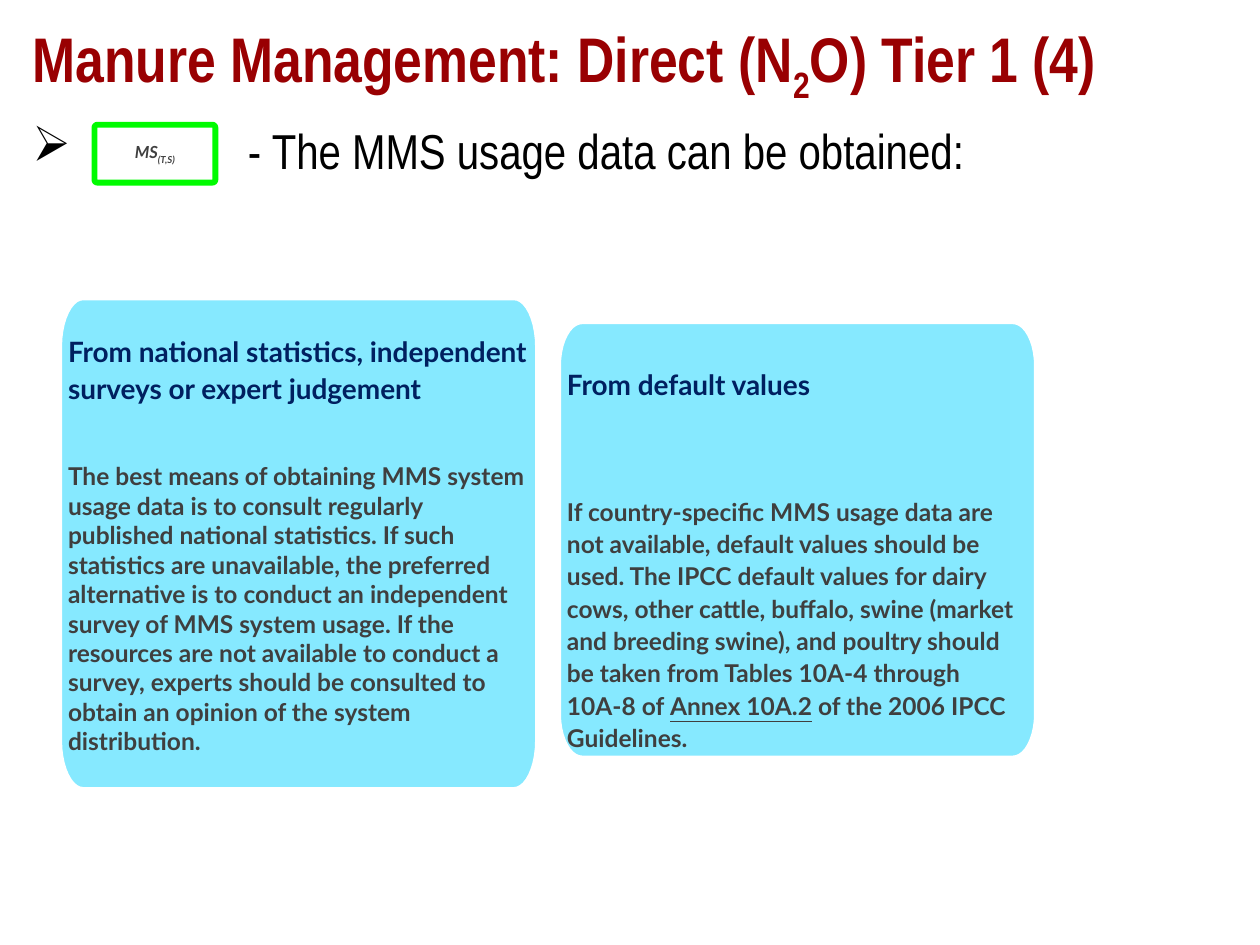
from math import cos, pi, sin

from pptx import Presentation
from pptx.dml.color import RGBColor
from pptx.enum.shapes import MSO_SHAPE
from pptx.enum.text import MSO_ANCHOR, PP_ALIGN
from pptx.oxml.ns import qn
from pptx.util import Inches, Pt

ROUNDED = MSO_SHAPE.ROUNDED_RECTANGLE
TOP, MIDDLE = MSO_ANCHOR.TOP, MSO_ANCHOR.MIDDLE
LEFT, CENTER = PP_ALIGN.LEFT, PP_ALIGN.CENTER

RED = RGBColor(0x99, 0x00, 0x02)
BLACK = RGBColor(0x00, 0x00, 0x00)
WHITE = RGBColor(0xFF, 0xFF, 0xFF)
GREEN = RGBColor(0x00, 0xFB, 0x00)
CYAN = RGBColor(0x86, 0xE9, 0xFF)
NAVY = RGBColor(0x00, 0x20, 0x60)
GREY = RGBColor(0x3F, 0x3F, 0x3F)

NARROW, LATO = "Arial Narrow", "Lato"
LINE_WIDTH = Pt(3.35)
CARD_WIDTH = 3.8
CORNER_WIDTH = 0.19
CORNER_STEPS = 10


class SlideBuilder:
    def __init__(self, page):
        self.page = page

    def frame(self, shape, anchor, insets):
        frame = shape.text_frame
        frame.word_wrap = True
        frame.vertical_anchor = anchor
        (frame.margin_left, frame.margin_top,
         frame.margin_right, frame.margin_bottom) = map(Inches, insets)
        return frame

    def fill_para(self, para, spans, size, font, color, bold=False, italic=False, align=LEFT):
        """Fill a paragraph; each span is (text, style), style "", "sub" or "underline"."""
        para.alignment = align
        for text, style in spans:
            span = para.add_run()
            span.text = text
            if style == "sub":
                span.font._element.set("baseline", "-25000")
            elif style == "underline":
                span.font.underline = True
        para.font.size, para.font.name = Pt(size), font
        para.font.bold, para.font.italic = bold, italic
        para.font.color.rgb = color

    def paint(self, shape, fill, line):
        shape.shadow.inherit = False
        shape.fill.solid()
        shape.fill.fore_color.rgb = fill
        shape.line.color.rgb = line
        shape.line.width = LINE_WIDTH

    def text(self, left, top, width, height, spans, size, color, bold=False, anchor=TOP):
        box = self.page.shapes.add_textbox(*map(Inches, (left, top, width, height)))
        para = self.frame(box, anchor, (0.1, 0.05, 0.1, 0.05)).paragraphs[0]
        self.fill_para(para, spans, size, NARROW, color, bold)
        return para

    def bullet(self, para, symbol, indent):
        properties = para._p.get_or_add_pPr()
        properties.set("marL", str(Inches(indent)))
        properties.set("indent", str(-Inches(indent)))
        mark = properties.makeelement(qn("a:buChar"), {"char": symbol})
        properties.insert_element_before(mark, "a:tabLst", "a:defRPr", "a:extLst")

    def tag(self, left, top, width, height, spans):
        shape = self.page.shapes.add_shape(ROUNDED, *map(Inches, (left, top, width, height)))
        shape.adjustments[0] = 0.05
        self.paint(shape, WHITE, GREEN)
        para = self.frame(shape, MIDDLE, (0.05, 0.03, 0.05, 0.03)).paragraphs[0]
        self.fill_para(para, spans, 9.5, LATO, GREY, True, True, CENTER)

    def card(self, left, top, height, corner_height, heading, body, gap, spacing, top_inset):
        # Outline: a quarter ellipse at each corner, clockwise from the top left
        right, bottom = left + CARD_WIDTH, top + height
        centers = [
            (left + CORNER_WIDTH, top + corner_height),
            (right - CORNER_WIDTH, top + corner_height),
            (right - CORNER_WIDTH, bottom - corner_height),
            (left + CORNER_WIDTH, bottom - corner_height),
        ]
        points = []
        for corner, (x, y) in enumerate(centers):
            for step in range(CORNER_STEPS + 1):
                angle = pi + (corner + step / CORNER_STEPS) * pi / 2
                points.append((Inches(x + CORNER_WIDTH * cos(angle)),
                               Inches(y + corner_height * sin(angle))))
        outline = self.page.shapes.build_freeform(*points[0])
        outline.add_line_segments(points[1:], close=True)
        shape = outline.convert_to_shape()
        self.paint(shape, CYAN, WHITE)

        # Heading and body
        frame = self.frame(shape, MIDDLE, (0.07, top_inset, 0.07, 0.07))
        title = frame.paragraphs[0]
        title.line_spacing = 1.1
        self.fill_para(title, [(heading, "")], 16, LATO, NAVY, True)
        para = frame.add_paragraph()
        para.line_spacing = spacing
        para.space_before = Pt(gap)
        self.fill_para(para, body, 14, LATO, GREY, True)


def main():
    deck = Presentation()
    deck.slide_width, deck.slide_height = Inches(10), Inches(7.5)
    builder = SlideBuilder(deck.slides.add_slide(deck.slide_layouts[6]))

    # Title
    builder.text(0.16, 0, 9.84, 0.99,
                 [("Manure Management: Direct (N", ""), ("2", "sub"), ("O) Tier 1 (4)", "")],
                 36, RED, True, MIDDLE)

    # Lead line, with room for the tag after its bullet
    lead = builder.text(0.16, 0.91, 9.84, 6.49,
                        [("- The MMS usage data can be obtained:", "")], 28, BLACK)
    builder.bullet(lead, "➢", 1.71)
    builder.tag(0.75, 0.99, 0.96, 0.46, [("MS", ""), ("(T,S)", "sub")])

    # Cards
    builder.card(
        0.47, 2.36, 3.91, 0.39,
        "From national statistics, independent surveys or expert judgement",
        [("The best means of obtaining MMS system usage data is to consult regularly "
          "published national statistics. If such statistics are unavailable, the preferred "
          "alternative is to conduct an independent survey of MMS system usage. If the "
          "resources are not available to conduct a survey, experts should be consulted to "
          "obtain an opinion of the system distribution.", "")],
        gap=32, spacing=1.0, top_inset=0.07)
    builder.card(
        4.43, 2.55, 3.47, 0.35,
        "From default values",
        [("If country-specific MMS usage data are not available, default values should be "
          "used. The IPCC default values for dairy cows, other cattle, buffalo, swine (market "
          "and breeding swine), and poultry should be taken from Tables 10A-4 through "
          "10A-8 of ", ""),
         ("Annex 10A.2", "underline"),
         (" of the 2006 IPCC Guidelines.", "")],
        gap=53, spacing=1.1, top_inset=0.36)

    deck.save("out.pptx")


if __name__ == "__main__":
    main()
